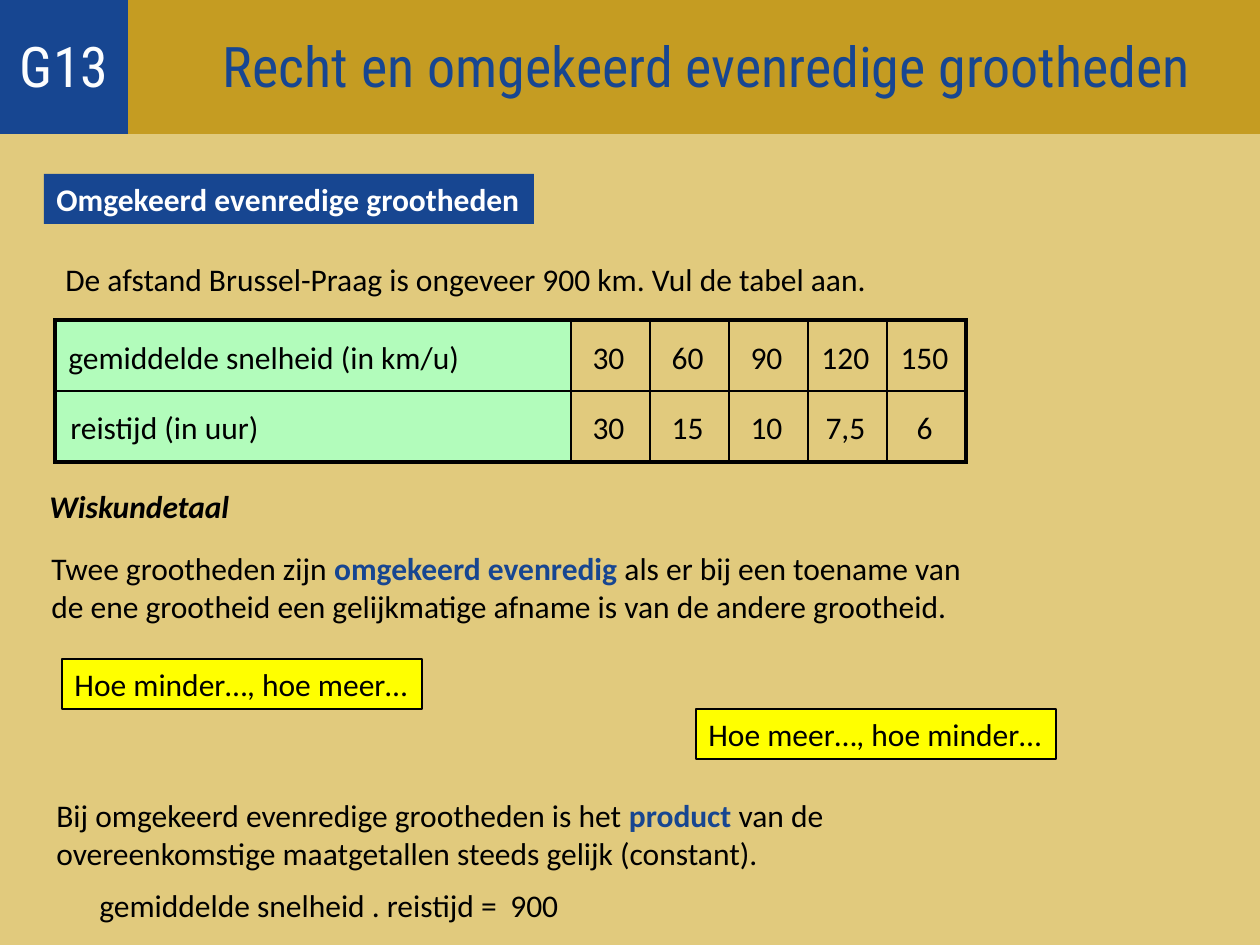
from dataclasses import dataclass

from lxml import etree
from pptx import Presentation
from pptx.dml.color import RGBColor
from pptx.enum.shapes import MSO_SHAPE
from pptx.enum.text import MSO_ANCHOR, MSO_AUTO_SIZE, PP_ALIGN
from pptx.oxml.ns import qn
from pptx.util import Pt

RECTANGLE = MSO_SHAPE.RECTANGLE
MIDDLE = MSO_ANCHOR.MIDDLE
FIT_SHAPE = MSO_AUTO_SIZE.SHAPE_TO_FIT_TEXT
LEFT, CENTER = PP_ALIGN.LEFT, PP_ALIGN.CENTER
EMU_PER_PX = 914400 / 126


def px(length):
    return round(length * EMU_PER_PX)


@dataclass(frozen=True)
class Theme:
    sand: str = "E1CA7D"
    gold: str = "C59C22"
    blue: str = "174691"
    mint: str = "B2FCBB"
    yellow: str = "FFFF00"
    black: str = "000000"
    white: str = "FFFFFF"
    off_white: str = "FCFDFE"
    body_font: str = "Calibri"
    title_font: str = "Roboto Condensed"
    body_size: int = 18
    title_size: int = 32
    hairline: float = 0.75
    inner_border: float = 1
    outer_border: float = 2.25


class SlideBuilder:
    def __init__(self, slide, theme):
        self.slide = slide
        self.theme = theme
        self.paint(slide.background.fill, theme.sand)

    def paint(self, fill, color):
        fill.solid()
        fill.fore_color.rgb = RGBColor.from_string(color)

    def style(self, run, color, bold=False, italic=False, title=False):
        theme = self.theme
        run.font.name = theme.title_font if title else theme.body_font
        run.font.size = Pt(theme.title_size if title else theme.body_size)
        run.font.bold = bold
        run.font.italic = italic
        run.font.color.rgb = RGBColor.from_string(color)

    def text(self, left, top, width, content, align=LEFT, wrap=False,
             bold=False, italic=False):
        box = self.slide.shapes.add_textbox(px(left), px(top), px(width), px(50))
        frame = box.text_frame
        frame.word_wrap = wrap
        frame.auto_size = FIT_SHAPE
        frame.text = content
        frame.paragraphs[0].alignment = align
        self.style(frame.paragraphs[0].runs[0], self.theme.black, bold, italic)

    def statement(self, left, top, width, lines):
        box = self.slide.shapes.add_textbox(px(left), px(top), px(width), px(88))
        frame = box.text_frame
        frame.word_wrap = True
        frame.auto_size = FIT_SHAPE
        frame.text = "\n".join("".join(line) for line in lines)
        for paragraph, line in zip(frame.paragraphs, lines):
            paragraph.clear()
            for index, part in enumerate(line):
                run = paragraph.add_run()
                run.text = part
                term = index == 1
                self.style(run, self.theme.blue if term else self.theme.black, bold=term)

    def rectangle(self, left, top, width, height, fill, outlined=False):
        shape = self.slide.shapes.add_shape(
            RECTANGLE, px(left), px(top), px(width), px(height))
        shape.shadow.inherit = False
        self.paint(shape.fill, fill)
        if outlined:
            shape.line.color.rgb = RGBColor.from_string(self.theme.black)
            shape.line.width = Pt(self.theme.hairline)
        else:
            shape.line.fill.background()
        return shape.text_frame

    def label(self, left, top, width, content, fill, color, bold=False, outlined=False):
        frame = self.rectangle(left, top, width, 50, fill, outlined)
        frame.word_wrap = False
        frame.auto_size = FIT_SHAPE
        frame.text = content
        frame.paragraphs[0].alignment = LEFT
        self.style(frame.paragraphs[0].runs[0], color, bold)

    def banner(self, width, content, fill, color, indent=13):
        frame = self.rectangle(0, -4, width, 138, fill)
        frame.word_wrap = True
        frame.vertical_anchor = MIDDLE
        frame.margin_left = px(indent)
        frame.text = content
        frame.paragraphs[0].alignment = CENTER
        self.style(frame.paragraphs[0].runs[0], color, title=True)

    def border(self, cell, outer_sides):
        properties = cell._tc.get_or_add_tcPr()
        for position, side in enumerate("LRTB"):
            points = self.theme.outer_border if side in outer_sides else self.theme.inner_border
            line = etree.Element(qn(f"a:ln{side}"), w=str(Pt(points)))
            fill = etree.SubElement(line, qn("a:solidFill"))
            etree.SubElement(fill, qn("a:srgbClr"), val=self.theme.black)
            properties.insert(position, line)

    def grid(self, left, top, widths, row_height, row_count):
        table = self.slide.shapes.add_table(
            row_count, len(widths), px(left), px(top),
            px(sum(widths)), px(row_height * row_count)).table
        table.first_row = table.horz_banding = False
        for column, width in zip(table.columns, widths):
            column.width = px(width)
        for r, row in enumerate(table.rows):
            row.height = px(row_height)
            for c, cell in enumerate(row.cells):
                if c == 0:
                    self.paint(cell.fill, self.theme.mint)
                else:
                    cell.fill.background()
                edges = {"L": c == 0, "R": c == len(widths) - 1,
                         "T": r == 0, "B": r == row_count - 1}
                self.border(cell, [side for side, outer in edges.items() if outer])


def main():
    presentation = Presentation()
    presentation.slide_width = px(1260)
    presentation.slide_height = px(945)
    theme = Theme()
    page = SlideBuilder(
        presentation.slides.add_slide(presentation.slide_layouts[6]), theme)

    quantities = [
        ("gemiddelde snelheid (in km/u)", 56, 332, ["30", "60", "90", "120", "150"]),
        ("reistijd (in uur)", 58, 402, ["30", "15", "10", "7,5", "6"]),
    ]
    value_width = 79
    page.grid(55, 320, [516] + [value_width] * 5, 71, len(quantities))
    for quantity, left, top, values in quantities:
        page.text(left, top, 456, quantity, wrap=True)
        for column, value in enumerate(values):
            box_width = 25 + 16 * len(value)
            center = 608 + value_width * column
            page.text(center - box_width // 2, top, box_width, value, CENTER)

    page.text(53, 254, 832, "De afstand Brussel-Praag is ongeveer 900 km. Vul de tabel aan.")
    page.statement(39, 543, 1007, [
        ["Twee grootheden zijn ", "omgekeerd evenredig ", "als er bij een toename van"],
        ["de ene grootheid een gelijkmatige afname is van de andere grootheid."],
    ])
    page.statement(44, 790, 922, [
        ["Bij omgekeerd evenredige grootheden is het ", "product ", "van de"],
        ["overeenkomstige maatgetallen steeds gelijk (constant)."],
    ])
    page.text(87, 880, 435, "gemiddelde snelheid . reistijd =")
    page.text(498, 880, 73, "900")
    page.text(37, 481, 207, "Wiskundetaal", bold=True, italic=True)

    for left, top, rule in [(62, 659, "Hoe minder…, hoe meer…"),
                            (696, 709, "Hoe meer…, hoe minder…")]:
        page.label(left, top, 360, rule, theme.yellow, theme.black, outlined=True)
    page.label(44, 174, 490, "Omgekeerd evenredige grootheden",
               theme.blue, theme.white, bold=True)

    page.banner(1260, "Recht en omgekeerd evenredige grootheden",
                theme.gold, theme.blue, indent=167)
    page.banner(128, "G13", theme.blue, theme.off_white)

    presentation.save("out.pptx")


if __name__ == "__main__":
    main()
